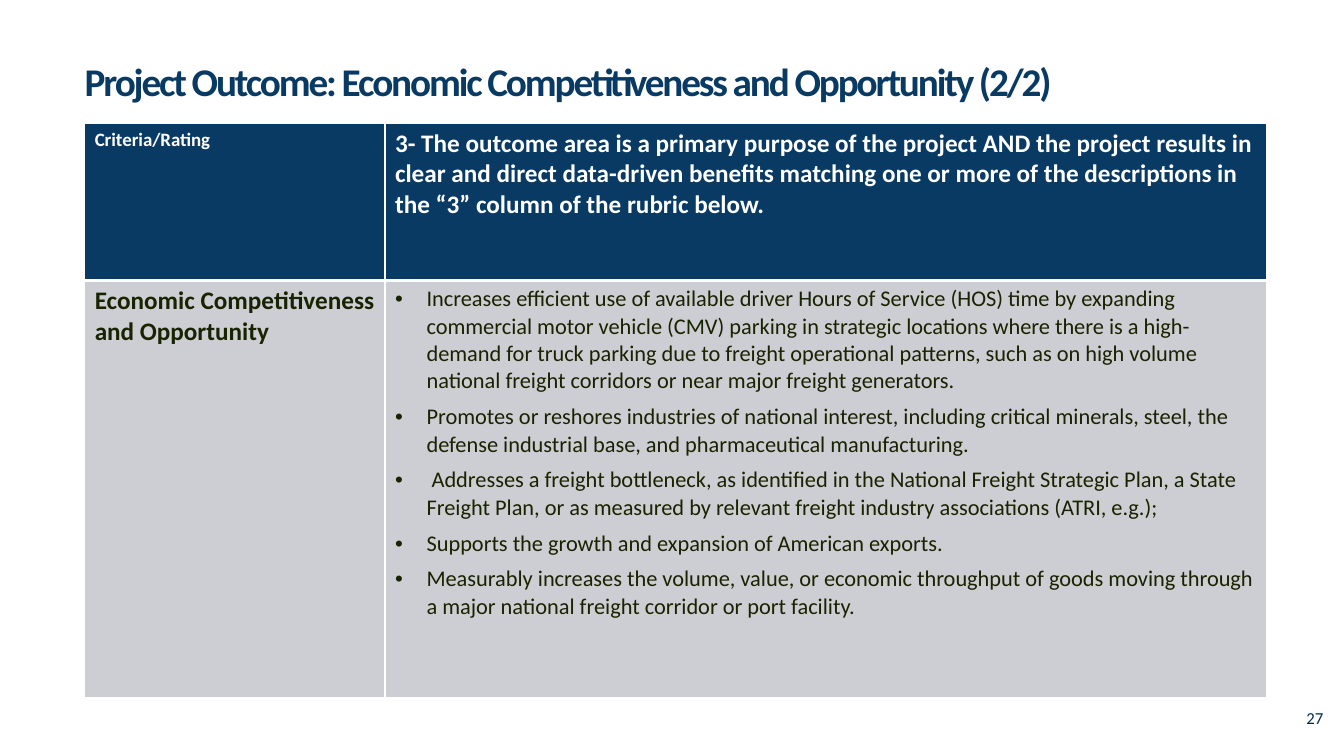
from dataclasses import dataclass

from lxml import etree
from pptx import Presentation
from pptx.dml.color import RGBColor
from pptx.enum.text import MSO_ANCHOR, MSO_AUTO_SIZE, PP_ALIGN
from pptx.oxml.ns import qn
from pptx.table import _Cell as Cell
from pptx.text.text import _Paragraph as Paragraph
from pptx.util import Pt

NAVY = RGBColor(0x08, 0x3A, 0x64)
DARK_NAVY = RGBColor(0x06, 0x2B, 0x4B)
OLIVE = RGBColor(0x18, 0x23, 0x00)
GREY = RGBColor(0xCC, 0xCE, 0xD3)
WHITE = RGBColor(0xFF, 0xFF, 0xFF)
FONT = "Calibri"
INDENT = Pt(22.5)
THIN, THICK = Pt(1), Pt(3)

BENEFITS = (
    "Increases efficient use of available driver Hours of Service (HOS) time by expanding "
    "commercial motor vehicle (CMV) parking in strategic locations where there is a "
    "high-demand for truck parking due to freight operational patterns, such as on high "
    "volume national freight corridors or near major freight generators.",
    "Promotes or reshores industries of national interest, including critical minerals, "
    "steel, the defense industrial base, and pharmaceutical manufacturing.",
    " Addresses a freight bottleneck, as identified in the National Freight Strategic Plan, "
    "a State Freight Plan, or as measured by relevant freight industry associations "
    "(ATRI, e.g.);",
    "Supports the growth and expansion of American exports.",
    "Measurably increases the volume, value, or economic throughput of goods moving through "
    "a major national freight corridor or port facility.",
)


@dataclass(frozen=True)
class RubricCell:
    row: int
    col: int
    lines: tuple[str, ...]
    size: float
    bold: bool = True
    bulleted: bool = False


RUBRIC = (
    RubricCell(0, 0, ("Criteria/Rating",), 13.5),
    RubricCell(0, 1, (
        "3- The outcome area is a primary purpose of the project AND the project results in "
        "clear and direct data-driven benefits matching one or more of the descriptions in "
        "the “3” column of the rubric below.",), 18),
    RubricCell(1, 0, ("Economic Competitiveness and Opportunity",), 18),
    RubricCell(1, 1, BENEFITS, 16, bold=False, bulleted=True),
)


def format_runs(p: Paragraph, size: float, color: RGBColor, bold: bool = False) -> None:
    for r in p.runs:
        r.font.name = FONT
        r.font.size = Pt(size)
        r.font.bold = bold
        r.font.color.rgb = color


def add_bullet(p: Paragraph) -> None:
    p.space_after = Pt(6)
    pPr = p._p.get_or_add_pPr()
    pPr.set("marL", str(INDENT))
    pPr.set("indent", str(-INDENT))
    etree.SubElement(pPr, qn("a:buFont")).set("typeface", "Arial")
    etree.SubElement(pPr, qn("a:buChar")).set("char", "•")


def set_borders(cell: Cell, top: int, bottom: int) -> None:
    tcPr = cell._tc.get_or_add_tcPr()
    for side, width in (("L", THIN), ("R", THIN), ("T", top), ("B", bottom)):
        ln = etree.SubElement(tcPr, qn(f"a:ln{side}"), w=str(width))
        fill = etree.SubElement(ln, qn("a:solidFill"))
        etree.SubElement(fill, qn("a:srgbClr")).set("val", str(WHITE))


def fill_cell(cell: Cell, item: RubricCell) -> None:
    header = item.row == 0
    set_borders(cell, THIN if header else THICK, THICK if header else THIN)
    cell.fill.solid()
    cell.fill.fore_color.rgb = NAVY if header else GREY
    tf = cell.text_frame
    tf.text = "\n".join(item.lines)
    for p in tf.paragraphs:
        if item.bulleted:
            add_bullet(p)
        format_runs(p, item.size, WHITE if header else OLIVE, item.bold)


def main() -> None:
    prs = Presentation()
    prs.slide_width, prs.slide_height = Pt(960), Pt(540)
    s = prs.slides.add_slide(prs.slide_layouts[5])

    # Title
    title = s.shapes.title
    title.left, title.top, title.width, title.height = Pt(60.5), Pt(42.5), Pt(754), Pt(35.3)
    tf = title.text_frame
    tf.text = "Project Outcome: Economic Competitiveness and Opportunity (2/2)"
    tf.auto_size = MSO_AUTO_SIZE.NONE
    tf.vertical_anchor = MSO_ANCHOR.MIDDLE
    tf.margin_left = tf.margin_top = tf.margin_right = tf.margin_bottom = 0
    p = tf.paragraphs[0]
    p.alignment = PP_ALIGN.LEFT
    p.line_spacing = 0.9
    format_runs(p, 28, NAVY, bold=True)
    p.runs[0].font._element.set("spc", "-150")

    # Rubric table
    frame = s.shapes.add_table(2, 2, Pt(60.5), Pt(88), Pt(844.5), Pt(410.4))
    table = frame.table
    table.horz_banding = False
    for column, width in zip(table.columns, (214.5, 630)):
        column.width = Pt(width)
    for row, height in zip(table.rows, (112.3, 298.1)):
        row.height = Pt(height)
    for item in RUBRIC:
        fill_cell(table.cell(item.row, item.col), item)

    # Page number
    number = s.shapes.add_textbox(Pt(926), Pt(502), Pt(34), Pt(34))
    tf = number.text_frame
    tf.word_wrap = True
    tf.text = "27"
    format_runs(tf.paragraphs[0], 12, DARK_NAVY)

    prs.save("out.pptx")


if __name__ == "__main__":
    main()
